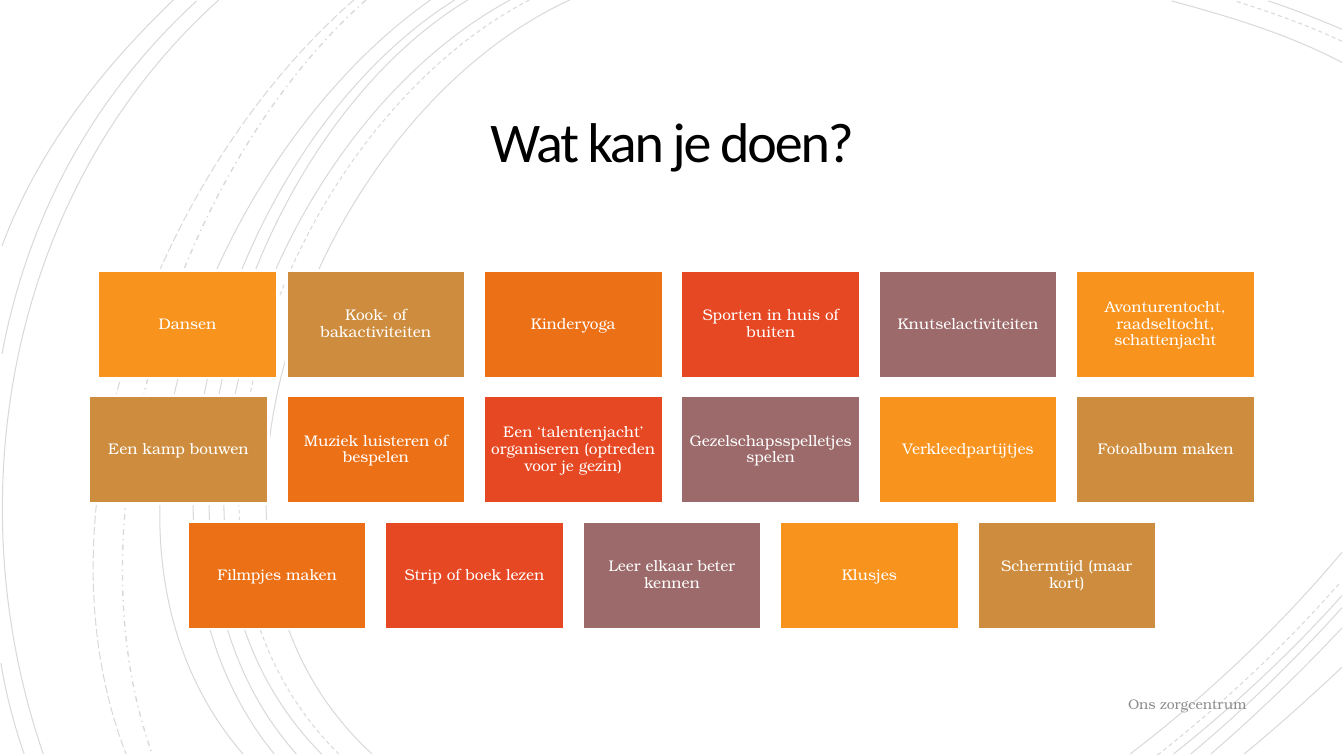
from lxml.etree import SubElement
from pptx import Presentation
from pptx.dml.color import RGBColor
from pptx.enum.dml import MSO_LINE_DASH_STYLE as Dash
from pptx.enum.shapes import MSO_SHAPE as Shape
from pptx.enum.text import MSO_ANCHOR as Anchor, PP_ALIGN as Align
from pptx.oxml.ns import qn
from pptx.util import Inches, Pt

BODY_FONT = "TeX Gyre Bonum"
TILE_COLORS = ["F8931D", "CE8D3E", "EC7016", "E64823", "9C6A6A"]
TILE_WIDTH, TILE_HEIGHT = 1.78, 1.07
FIRST_TILE_SHIFT = 0.09

ACTIVITY_ROWS = [
    ["Dansen", "Kook- of bakactiviteiten", "Kinderyoga",
     "Sporten in huis of buiten", "Knutselactiviteiten",
     "Avonturentocht, raadseltocht, schattenjacht"],
    ["Een kamp bouwen", "Muziek luisteren of bespelen",
     "Een ‘talentenjacht’ organiseren (optreden voor je gezin)",
     "Gezelschapsspelletjes spelen", "Verkleedpartijtjes", "Fotoalbum maken"],
    ["Filmpjes maken", "Strip of boek lezen", "Leer elkaar beter kennen",
     "Klusjes", "Schermtijd (maar kort)"],
]

SOLID_ARCS = [
    [(5.65, 0), (3.15, 1.15), (1.43, 5.4), (3.69, 7.48)],
    [(13.31, 0.62), (12.78, 0.34), (12.18, 0.16), (11.62, 0.01)],
    [(11.21, 7.48), (11.97, 6.9), (12.69, 6.22), (13.31, 5.48)],
    [(5.06, 0), (2.7, 1.27), (1.1, 5.37), (3.19, 7.48)],
    [(13.31, 0.29), (13.07, 0.19), (12.83, 0.09), (12.58, 0.01)],
    [(11.64, 7.48), (12.23, 7.01), (12.8, 6.48), (13.31, 5.91)],
    [(4.64, 0), (2.44, 1.33), (1.1, 5.41), (2.94, 7.48)],
    [(11.81, 7.48), (12.34, 7.04), (12.84, 6.55), (13.31, 6.03)],
    [(4.51, 0), (2.31, 1.38), (0.97, 5.33), (2.72, 7.48)],
    [(12.01, 7.48), (12.46, 7.09), (12.9, 6.67), (13.31, 6.23)],
    [(4.27, 0), (2.17, 1.47), (0.53, 5.29), (2.41, 7.48)],
    [(12.34, 7.48), (12.67, 7.21), (12.99, 6.92), (13.31, 6.62)],
    [(2.17, 0), (0.11, 1.85), (-0.46, 4.9), (0.43, 7.48)],
    [(1.95, 0.01), (0.92, 0.96), (0.28, 2.14), (0.02, 3.51)],
    [(0.01, 6.58), (0.06, 6.89), (0.14, 7.19), (0.24, 7.48)],
    [(1.72, 0), (1, 0.69), (0.37, 1.5), (0.02, 2.44)],
]
DASHED_ARCS = [
    [(5.25, 0), (2.85, 1.25), (1.23, 5.37), (3.36, 7.48)],
    [(13.31, 0.41), (12.97, 0.25), (12.6, 0.12), (12.25, 0.01)],
    [(11.48, 7.49), (12.13, 6.98), (12.75, 6.4), (13.3, 5.77)],
]
DASH_DOT_ARC = [(3.63, 0), (1.76, 1.66), (0.65, 5.09), (1.51, 7.48)]
LONG_DASH_ARC = [(3.51, 0), (1.57, 1.69), (0.29, 4.99), (1.25, 7.48)]


def color(code):
    return RGBColor.from_string(code)


def write(shape, text, font=BODY_FONT, size=11, ink="FFFFFF", align=Align.CENTER,
          leading=1.0, insets=(0.1, 0.05), tracking=None):
    frame = shape.text_frame
    frame.word_wrap = True
    frame.vertical_anchor = Anchor.MIDDLE
    frame.margin_left = frame.margin_right = Inches(insets[0])
    frame.margin_top = frame.margin_bottom = Inches(insets[1])
    para = frame.paragraphs[0]
    para.alignment = align
    para.line_spacing = leading
    span = para.add_run()
    span.text = text
    span.font.name = font
    span.font.size = Pt(size)
    span.font.color.rgb = color(ink)
    if tracking is not None:
        span.font._element.set("spc", str(int(tracking * 100)))


def add_arc(page, points, dash=Dash.SOLID, weight=0.75):
    start, *others = [(Inches(x), Inches(y)) for x, y in points]
    builder = page.shapes.build_freeform(*start, scale=1.0)
    builder.add_line_segments(others, close=False)
    arc = builder.convert_to_shape()
    arc.shadow.inherit = False
    arc.fill.background()
    arc.line.width = Pt(weight)
    arc.line.dash_style = dash
    arc.line.color.rgb = color("000000")
    tint = arc._element.find(".//" + qn("a:ln")).find(".//" + qn("a:srgbClr"))
    SubElement(tint, qn("a:alpha"), val="15000")
    outline = arc._element.find(".//" + qn("a:path"))
    curve = SubElement(outline, qn("a:cubicBezTo"))
    for segment in outline.findall(qn("a:lnTo")):
        curve.append(segment[0])
        outline.remove(segment)


def add_backdrop(page):
    for points in SOLID_ARCS:
        add_arc(page, points)
    for points in DASHED_ARCS:
        add_arc(page, points, Dash.DASH)
    add_arc(page, DASH_DOT_ARC, Dash.DASH_DOT, 1)
    add_arc(page, LONG_DASH_ARC, Dash.LONG_DASH)


def add_text(page, box, text, **style):
    write(page.shapes.add_textbox(*map(Inches, box)), text, **style)


def add_tile(page, left, top, text, fill):
    tile = page.shapes.add_shape(Shape.RECTANGLE, Inches(left), Inches(top),
                                 Inches(TILE_WIDTH), Inches(TILE_HEIGHT))
    tile.shadow.inherit = False
    tile.fill.solid()
    tile.fill.fore_color.rgb = color(fill)
    tile.line.color.rgb = color("FFFFFF")
    tile.line.width = Pt(2)
    write(tile, text, leading=0.9, insets=(0.05, 0.05))


def add_activities(page, box):
    left, top, width, height = box
    columns = max(map(len, ACTIVITY_ROWS))
    step_x = (width - TILE_WIDTH) / (columns - 1)
    step_y = (height - TILE_HEIGHT) / (len(ACTIVITY_ROWS) - 1)
    count = 0
    for row, activities in enumerate(ACTIVITY_ROWS):
        row_left = left + (columns - len(activities)) * step_x / 2
        for column, activity in enumerate(activities):
            shift = FIRST_TILE_SHIFT if count == 0 else 0
            add_tile(page, row_left + column * step_x + shift, top + row * step_y,
                     activity, TILE_COLORS[count % len(TILE_COLORS)])
            count += 1


def main():
    deck = Presentation()
    deck.slide_width, deck.slide_height = Inches(13.33), Inches(7.5)
    page = deck.slides.add_slide(deck.slide_layouts[6])
    add_backdrop(page)
    add_text(page, (1.92, 0.87, 9.49, 1.15), "Wat kan je doen?", font="Calibri",
             size=40, ink="000000", leading=0.85, insets=(0.25, 0.25), tracking=-1.5)
    add_text(page, (0.88, 6.81, 11.58, 0.35), "Ons zorgcentrum", size=10,
             ink="8C8C8C", align=Align.RIGHT)
    add_activities(page, (0.88, 2.68, 11.57, 3.56))
    deck.save("out.pptx")


if __name__ == "__main__":
    main()
